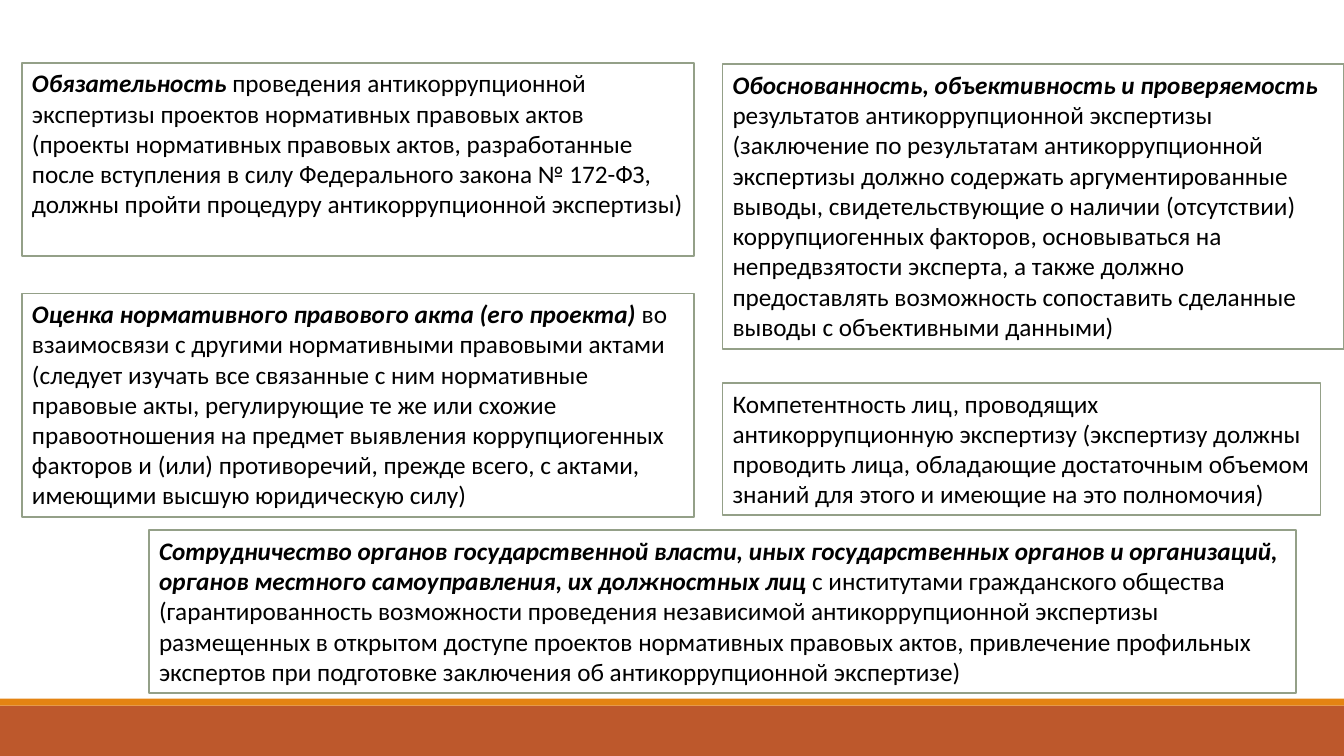
"""Build a slide of boxed principles of anti-corruption review."""
from pptx import Presentation
from pptx.dml.color import RGBColor
from pptx.enum.shapes import MSO_SHAPE
from pptx.enum.text import MSO_ANCHOR, MSO_AUTO_SIZE, PP_ALIGN
from pptx.util import Pt

WIDE, HIGH = 960, 540
LEFT, RIGHT = 15.8, 516.2
COL = 480.2
BANDS = [(504, 36, "BD582C"), (499, 5, "E48312")]
BOXES = [
    (LEFT, 44.9, COL, 138, "Обязательность ",
     "проведения антикоррупционной экспертизы проектов нормативных правовых актов "
     "(проекты нормативных правовых актов, разработанные после вступления в силу "
     "Федерального закона № 172-ФЗ, должны пройти процедуру антикоррупционной экспертизы)"),
    (LEFT, 209.6, COL, 160, "Оценка нормативного правового акта (его проекта) ",
     "во взаимосвязи с другими нормативными правовыми актами (следует изучать все "
     "связанные с ним нормативные правовые акты, регулирующие те же или схожие "
     "правоотношения на предмет выявления коррупциогенных факторов и (или) "
     "противоречий, прежде всего, с актами, имеющими высшую юридическую силу)"),
    (RIGHT, 45.9, 443.8, 203.5, "Обоснованность, объективность и проверяемость ",
     "результатов антикоррупционной экспертизы (заключение по результатам "
     "антикоррупционной экспертизы должно содержать аргументированные выводы, "
     "свидетельствующие о наличии (отсутствии) коррупциогенных факторов, "
     "основываться на непредвзятости эксперта, а также должно предоставлять "
     "возможность сопоставить сделанные выводы с объективными данными)"),
    (RIGHT, 273.6, 427, 94.5, "",
     "Компетентность лиц, проводящих антикоррупционную экспертизу (экспертизу должны "
     "проводить лица, обладающие достаточным объемом знаний для этого и имеющие на "
     "это полномочия)"),
    (106.5, 378.7, 819.4, 116.5,
     "Сотрудничество органов государственной власти, иных государственных органов и "
     "организаций, органов местного самоуправления, их должностных лиц ",
     "с институтами гражданского общества (гарантированность возможности проведения "
     "независимой антикоррупционной экспертизы размещенных в открытом доступе проектов "
     "нормативных правовых актов, привлечение профильных экспертов при подготовке "
     "заключения об антикоррупционной экспертизе)"),
]
FRAME = {"word_wrap": True, "auto_size": MSO_AUTO_SIZE.NONE,
         "vertical_anchor": MSO_ANCHOR.TOP}
FONT = {"name": "Calibri", "size": Pt(18)}


def paint(form, color):
    form.rgb = RGBColor.from_string(color)


def format(item, values):
    for key, value in values.items():
        setattr(item, key, value)


def block(slide, left, top, width, height, fill, line=None):
    shape = slide.shapes.add_shape(
        MSO_SHAPE.RECTANGLE, Pt(left), Pt(top), Pt(width), Pt(height))
    shape.shadow.inherit = False
    shape.fill.solid()
    paint(shape.fill.fore_color, fill)
    if line:
        paint(shape.line.color, line)
        shape.line.width = Pt(1.25)
    else:
        shape.line.fill.background()
    return shape


def write(shape, lead, body):
    format(shape.text_frame, FRAME)
    para = shape.text_frame.paragraphs[0]
    para.alignment = PP_ALIGN.LEFT
    for text, strong in ((lead, True), (body, False)):
        if text:
            run = para.add_run()
            run.text = text
            format(run.font, {**FONT, "bold": strong, "italic": strong})
            paint(run.font.color, "000000")


def main():
    deck = Presentation()
    format(deck, {"slide_width": Pt(WIDE), "slide_height": Pt(HIGH)})
    slide = deck.slides.add_slide(deck.slide_layouts[6])
    for top, height, color in BANDS:
        block(slide, 0, top, WIDE, height, color)
    for *place, lead, body in BOXES:
        write(block(slide, *place, "FFFFFF", "94A088"), lead, body)
    deck.save("out.pptx")


if __name__ == "__main__":
    main()
